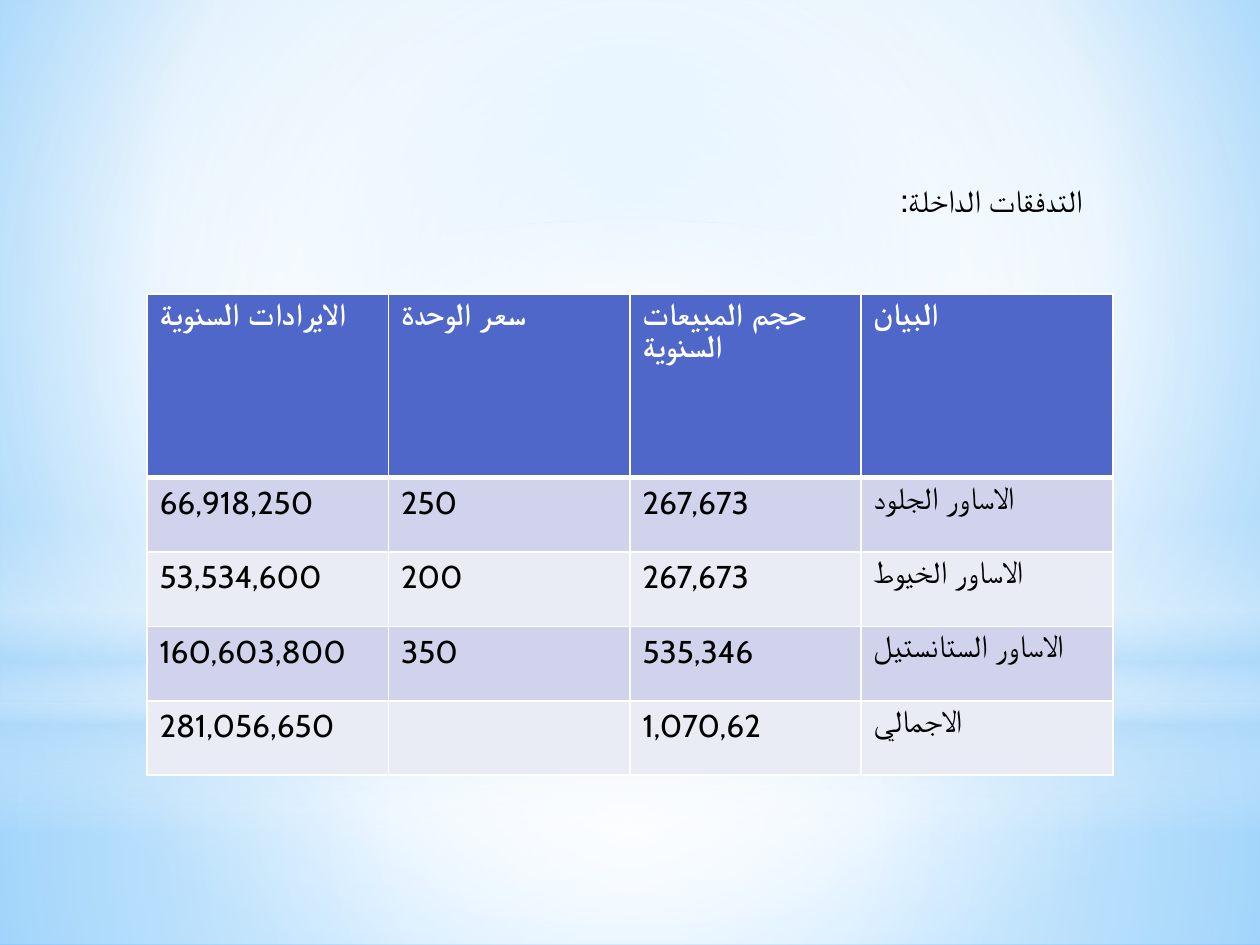
from dataclasses import dataclass

from lxml.etree import SubElement
from pptx import Presentation
from pptx.dml.color import RGBColor
from pptx.enum.shapes import MSO_SHAPE
from pptx.enum.text import MSO_ANCHOR, MSO_AUTO_SIZE, PP_ALIGN
from pptx.oxml.ns import qn
from pptx.util import Pt

TITLE = "التدفقات الداخلة:"
CASH_FLOWS = [
    ["الايرادات السنوية", "سعر الوحدة", "حجم المبيعات السنوية", "البيان"],
    ["66,918,250", "250", "267,673", "الاساور الجلود"],
    ["53,534,600", "200", "267,673", "الاساور الخيوط"],
    ["160,603,800", "350", "535,346", "الاساور الستانستيل"],
    ["281,056,650", "", "1,070,62", "الاجمالي"],
]
CENTRE = (50, 50, 50, 50)


@dataclass(frozen=True)
class Theme:
    font: str = "Cabin"
    size: int = 18
    text: str = "000000"
    white: str = "FFFFFF"
    header: str = "4E67C8"
    bands: tuple = ("D0D3EB", "E9EBF5")
    wash: str = "B4DCFA"
    sky_centre: str = "9ED5FF"
    sky_edge: str = "5BB9FF"


def set_gradient(properties, stops, focus=None):
    """Swap a solid fill for stops of (position, colour, opacity) in percent.

    A focus rectangle makes the gradient circular; without it, it runs downwards.
    """
    solid = properties.find(qn("a:solidFill"))
    gradient = properties.makeelement(qn("a:gradFill"), {"rotWithShape": "1"})
    properties.replace(solid, gradient)
    stop_list = SubElement(gradient, qn("a:gsLst"))
    for position, color, opacity in stops:
        stop = SubElement(stop_list, qn("a:gs"), pos=str(position * 1000))
        rgb = SubElement(stop, qn("a:srgbClr"), val=color)
        if opacity < 100:
            SubElement(rgb, qn("a:alpha"), val=str(opacity * 1000))
    if focus is None:
        SubElement(gradient, qn("a:lin"), ang=str(90 * 60000), scaled="0")
    else:
        circle = SubElement(gradient, qn("a:path"), {"path": "circle"})
        sides = {side: str(value * 1000) for side, value in zip("ltrb", focus)}
        SubElement(circle, qn("a:fillToRect"), sides)


class SlideBuilder:
    def __init__(self, slide, theme):
        self.slide = slide
        self.theme = theme

    def background(self, stops, focus):
        self.slide.background.fill.solid()
        properties = self.slide.element.find(".//" + qn("p:bgPr"))
        set_gradient(properties, stops, focus)

    def glow(self, preset, top, height, stops, focus=None):
        shape = self.slide.shapes.add_shape(preset, 0, Pt(top), Pt(720), Pt(height))
        shape.shadow.inherit = False
        shape.line.fill.background()
        shape.fill.solid()
        set_gradient(shape.element.spPr, stops, focus)

    def text_run(self, paragraph, text, color, bold=False):
        run = paragraph.add_run()
        run.text = text
        run.font.name = self.theme.font
        run.font.size = Pt(self.theme.size)
        run.font.bold = bold
        run.font.color.rgb = RGBColor.from_string(color)

    def title(self, text, left, top, width, height):
        title = self.slide.shapes.title
        title.left, title.top = Pt(left), Pt(top)
        title.width, title.height = Pt(width), Pt(height)
        self.slide.shapes.element.append(title.element)  # bring to front
        frame = title.text_frame
        frame.word_wrap = False
        frame.auto_size = MSO_AUTO_SIZE.SHAPE_TO_FIT_TEXT
        frame.vertical_anchor = MSO_ANCHOR.TOP
        paragraph = frame.paragraphs[0]
        paragraph.alignment = PP_ALIGN.RIGHT
        paragraph._p.get_or_add_pPr().set("rtl", "1")
        self.text_run(paragraph, text, self.theme.text)

    def cell_borders(self, cell, is_header):
        properties = cell._tc.get_or_add_tcPr()
        for index, side in enumerate("LRTB"):
            width = 3 if is_header and side == "B" else 1
            line = properties.makeelement(qn(f"a:ln{side}"), {"w": str(Pt(width))})
            fill = SubElement(line, qn("a:solidFill"))
            SubElement(fill, qn("a:srgbClr"), val=self.theme.white)
            properties.insert(index, line)

    def table(self, rows, left, top, column_widths, row_heights):
        table = self.slide.shapes.add_table(
            len(rows), len(column_widths), Pt(left), Pt(top),
            Pt(sum(column_widths)), Pt(sum(row_heights)),
        ).table
        for column, width in zip(table.columns, column_widths):
            column.width = Pt(width)
        for row_index, (values, height) in enumerate(zip(rows, row_heights)):
            table.rows[row_index].height = Pt(height)
            is_header = row_index == 0
            fill = self.theme.header if is_header else self.theme.bands[(row_index - 1) % 2]
            color = self.theme.white if is_header else self.theme.text
            for column_index, value in enumerate(values):
                cell = table.cell(row_index, column_index)
                cell.fill.solid()
                cell.fill.fore_color.rgb = RGBColor.from_string(fill)
                self.cell_borders(cell, is_header)
                if value:
                    self.text_run(cell.text_frame.paragraphs[0], value, color, is_header)


def main():
    theme = Theme()
    presentation = Presentation()
    presentation.slide_width, presentation.slide_height = Pt(720), Pt(540)
    title_only = presentation.slide_layouts[5]
    builder = SlideBuilder(presentation.slides.add_slide(title_only), theme)
    white, wash = theme.white, theme.wash

    builder.background(
        [(0, theme.sky_centre, 100), (60, white, 100), (100, theme.sky_edge, 100)],
        (20, 10, 20, 60),
    )
    horizon = 402
    builder.glow(MSO_SHAPE.RECTANGLE, horizon, 540 - horizon,
                 [(0, white, 91), (37, white, 76), (100, wash, 79)], CENTRE)
    builder.glow(MSO_SHAPE.RECTANGLE, 0, horizon,
                 [(0, white, 89), (48, white, 62), (100, wash, 79)], CENTRE)
    builder.glow(MSO_SHAPE.RECTANGLE, 297, 180,
                 [(0, white, 0), (29, white, 30), (45, wash, 40),
                  (55, white, 26), (65, wash, 60), (100, white, 0)])
    builder.glow(MSO_SHAPE.OVAL, 126, horizon,
                 [(0, white, 100), (56, white, 0)], CENTRE)

    builder.table(CASH_FLOWS, 84, 168, [138, 138, 132, 144], [105] + [42.5] * 4)
    builder.title(TITLE, 484, 100, 142, 29)
    presentation.save("out.pptx")


if __name__ == "__main__":
    main()
